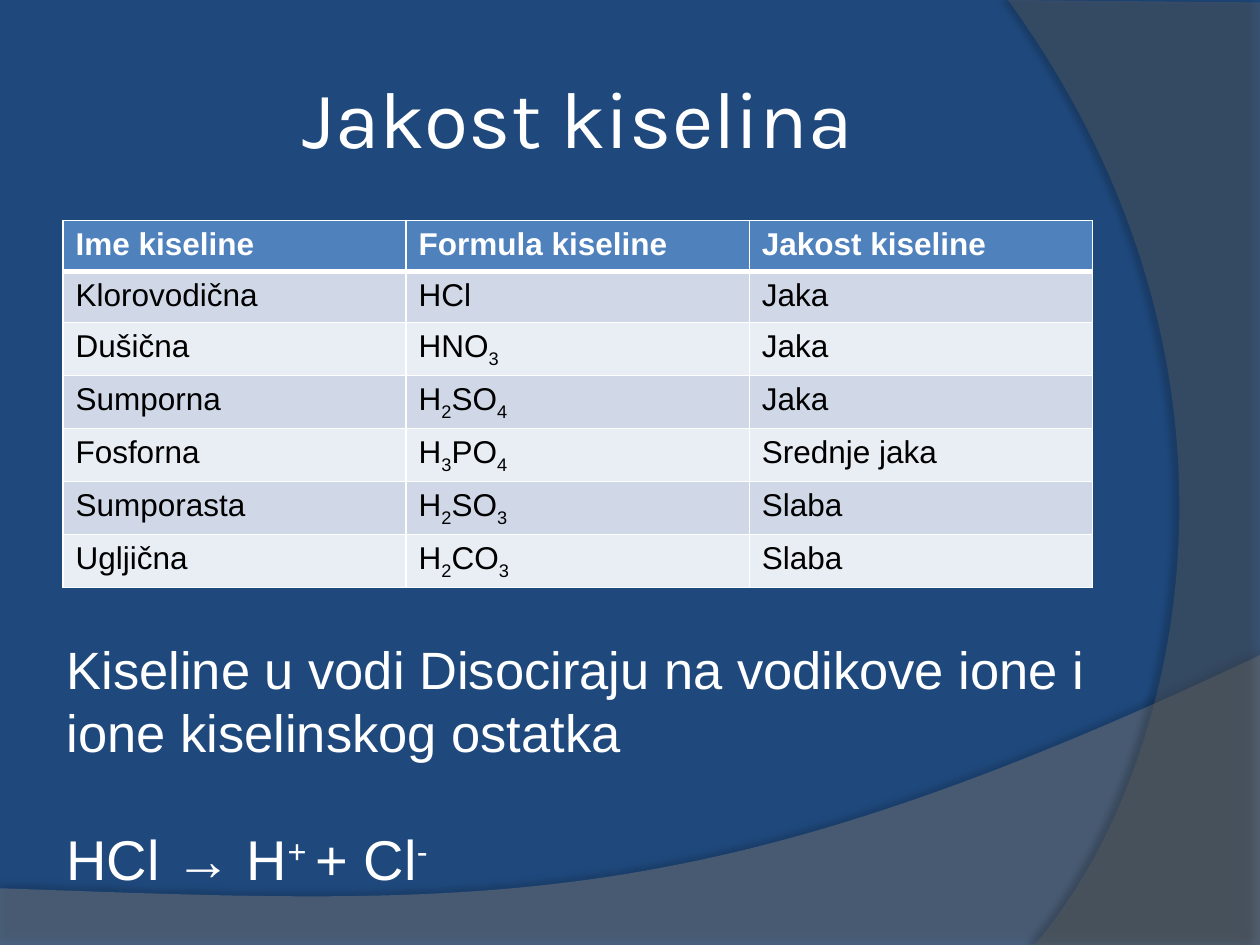
"""Build a slide on the strength of acids."""
from lxml import etree
from pptx import Presentation
from pptx.dml.color import RGBColor
from pptx.enum.text import MSO_ANCHOR, MSO_AUTO_SIZE, PP_ALIGN
from pptx.oxml import parse_xml
from pptx.oxml.ns import nsdecls, qn
from pptx.util import Inches, Pt

CENTER, MIDDLE = PP_ALIGN.CENTER, MSO_ANCHOR.MIDDLE
GROW = MSO_AUTO_SIZE.SHAPE_TO_FIT_TEXT
TITLE_ONLY = 5
BORDERS = ("lnL", "lnR", "lnT", "lnB")
ACIDS = [
    ("Ime kiseline", "Formula kiseline", "Jakost kiseline"),
    ("Klorovodična", "HCl", "Jaka"),
    ("Dušična", "HNO|3", "Jaka"),
    ("Sumporna", "H|2|SO|4", "Jaka"),
    ("Fosforna", "H|3|PO|4", "Srednje jaka"),
    ("Sumporasta", "H|2|SO|3", "Slaba"),
    ("Ugljična", "H|2|CO|3", "Slaba"),
]


def rgb(color):
    """Turn a hex string into a colour."""
    return RGBColor.from_string(color)


def grid(*units):
    """Turn cells of a 100 by 75 grid into lengths."""
    return [Inches(u / 10) for u in units]


def write(p, text, size=18, font="Arial", color="FFFFFF", bold=False, shift=-25, align=None):
    """Add runs to a paragraph, shifting the baseline of every second part between bars."""
    p.alignment = align
    for i, part in enumerate(text.split("|")):
        r = p.add_run()
        r.text = part
        r.font.size, r.font.name, r.font.bold = Pt(size), font, bold
        r.font.color.rgb = rgb(color)
        if i % 2:
            r.font._element.set("baseline", str(shift * 1000))


def bezier(a, b, c, d, steps=60):
    """Return points along a cubic curve."""
    ts = [i / steps for i in range(steps + 1)]
    return [[(1 - t) ** 3 * a[k] + 3 * (1 - t) ** 2 * t * b[k]
             + 3 * (1 - t) * t ** 2 * c[k] + t ** 3 * d[k] for k in (0, 1)] for t in ts]


class AcidSlide:
    """Hold the style and the current slide."""

    def __init__(self, prs, background="1F497D"):
        """Add a title-only slide with a plain background."""
        self.s = prs.slides.add_slide(prs.slide_layouts[TITLE_ONLY])
        fill = self.s.background.fill
        fill.solid()
        fill.fore_color.rgb = rgb(background)

    def sweep(self, points, color, opacity, shadow, angle, distance):
        """Draw a translucent outline with a soft shadow behind the title."""
        start, *rest = [grid(*pt) for pt in points]
        builder = self.s.shapes.build_freeform(*start, scale=1.0)
        builder.add_line_segments(rest, close=True)
        sp = builder.convert_to_shape()
        sp.line.fill.background()
        sp.fill.solid()
        sp.fill.fore_color.rgb = rgb(color)
        props = sp.element.spPr
        tint = props.find(qn("a:solidFill"))[0]
        etree.SubElement(tint, qn("a:alpha"), val=str(opacity * 1000))
        props.append(parse_xml(
            f'<a:effectLst {nsdecls("a")}><a:outerShdw blurRad="{Pt(4)}" '
            f'dist="{Pt(distance)}" dir="{angle * 60000}" rotWithShape="0"><a:srgbClr val="000000">'
            f'<a:alpha val="{shadow * 1000}"/></a:srgbClr></a:outerShdw></a:effectLst>'))
        self.s.shapes.title.element.addprevious(sp.element)

    def title(self, text, *box):
        """Move and fill the title placeholder."""
        sp = self.s.shapes.title
        sp.left, sp.top, sp.width, sp.height = grid(*box)
        tf = sp.text_frame
        tf.vertical_anchor = MIDDLE
        tf.margin_left = tf.margin_right = tf.margin_top = tf.margin_bottom = Inches(0.05)
        write(tf.paragraphs[0], text, size=46, font="Karla", align=CENTER)

    def table(self, rows, *box):
        """Add a table with a header, banded rows and white borders."""
        tbl = self.s.shapes.add_table(len(rows), len(rows[0]), *grid(*box)).table
        for i, row in enumerate(rows):
            fill = ("E9EDF4", "D0D8E8")[i % 2] if i else "4F81BD"
            for j, text in enumerate(row):
                cell = tbl.cell(i, j)
                write(cell.text_frame.paragraphs[0], text,
                      color="000000" if i else "FFFFFF", bold=not i)
                self.borders(cell, top=1 if i != 1 else 3, bottom=1 if i else 3)
                cell.fill.solid()
                cell.fill.fore_color.rgb = rgb(fill)

    def borders(self, cell, top, bottom, color="FFFFFF"):
        """Draw the four borders of a cell."""
        props = cell._tc.get_or_add_tcPr()
        for tag, width in zip(BORDERS, (1, 1, top, bottom)):
            ln = etree.SubElement(props, qn(f"a:{tag}"), w=str(Pt(width)))
            fill = etree.SubElement(ln, qn("a:solidFill"))
            etree.SubElement(fill, qn("a:srgbClr"), val=color)

    def text(self, statement, equation, *box):
        """Add a statement with an equation below it."""
        tf = self.s.shapes.add_textbox(*grid(*box)).text_frame
        tf.word_wrap, tf.auto_size = True, GROW
        write(tf.paragraphs[0], statement, size=30)
        p = tf.add_paragraph()
        p.space_before = Pt(35)
        write(p, equation, size=32, shift=30)


def main():
    """Build and save the slide."""
    prs = Presentation()
    prs.slide_width, prs.slide_height = grid(100, 75)
    slide = AcidSlide(prs)
    wave = bezier((100, 52), (55.9, 72.9), (39.1, 71.9), (0, 70.5))
    slide.sweep([(0, 75), (100, 75), *wave], "7F7F7F", 45, 35, 270, 3.5)
    arc = bezier((82.1, 75), (93.5, 61.9), (101.8, 30), (80, 0))
    slide.sweep([(100, 0.2), (100, 75), *arc], "5E5E5E", 40, 45, 180, 4)
    slide.title("Jakost kiselina", 5, 3, 81.7, 12.5)
    slide.table(ACIDS, 5, 17.5, 81.7, 28.4)
    slide.text("Kiseline u vodi Disociraju na vodikove ione i ione kiselinskog ostatka",
               "HCl → H|+ |+ Cl|-", 4.3, 50.1, 91.3, 21)
    prs.save("out.pptx")


if __name__ == "__main__":
    main()
